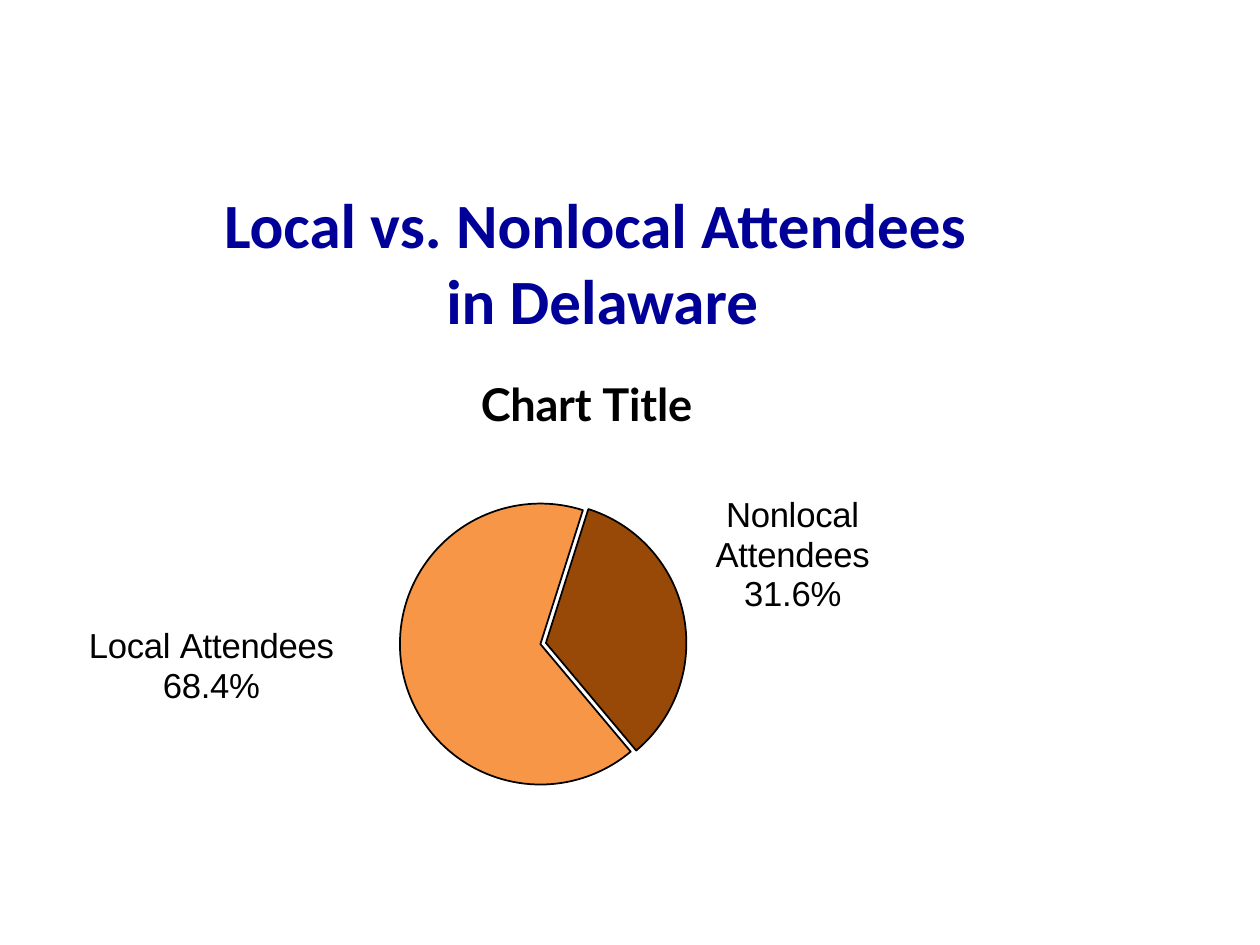
from lxml import etree
from pptx import Presentation
from pptx.chart.data import CategoryChartData
from pptx.dml.color import RGBColor
from pptx.enum.chart import XL_CHART_TYPE, XL_LABEL_POSITION
from pptx.enum.text import MSO_ANCHOR, PP_ALIGN
from pptx.oxml.ns import qn
from pptx.util import Inches, Pt

PIE = XL_CHART_TYPE.PIE
OUT = XL_LABEL_POSITION.OUTSIDE_END
MIDDLE = MSO_ANCHOR.MIDDLE
CENTER = PP_ALIGN.CENTER

COLORS = {"navy": "000099", "black": "000000", "orange": "F79646", "brown": "984807"}
SLICES = [
    (66, "orange", ["Local Attendees", "68.4%"], (-0.05, -0.07)),
    (34, "brown", ["Nonlocal", "Attendees", "31.6%"], (0.02, 0)),
]


def color(name):
    return RGBColor.from_string(COLORS[name])


def style(font, face, size, tint, bold):
    font.name, font.size, font.bold = face, Pt(size), bold
    font.color.rgb = color(tint)


def set_val(node, tag, val):
    child = node.find(qn(tag))
    if child is None:
        child = etree.SubElement(node, qn(tag))
    child.set("val", str(val))


def set_layout(node, spot, **vals):
    for old in node.findall(qn("c:layout")):
        node.remove(old)
    layout = etree.Element(qn("c:layout"))
    manual = etree.SubElement(layout, qn("c:manualLayout"))
    for tag, val in vals.items():
        set_val(manual, "c:" + tag, val)
    node.insert(spot, layout)


def add_title(slide, left, top, width, height):
    frame = slide.shapes.add_textbox(left, top, width, height).text_frame
    frame.word_wrap = True
    frame.vertical_anchor = MIDDLE
    para = frame.paragraphs[0]
    para.alignment = CENTER
    for num, text in enumerate(["Local vs. Nonlocal Attendees ", "in Delaware"]):
        if num:
            para.add_line_break()
        run = para.add_run()
        run.text = text
        style(run.font, "Calibri", 36, "navy", True)


def add_label(point, lines, shift):
    label = point.data_label
    frame = label.text_frame
    for num, text in enumerate(lines):
        para = frame.add_paragraph() if num else frame.paragraphs[0]
        run = para.add_run()
        run.text = text
        style(run.font, "Arial", 19.8, "black", False)
    label.position = OUT
    node = frame._txBody.getparent().getparent()
    set_layout(node, 1, x=shift[0], y=shift[1])


def add_pie(slide, left, top, width, height):
    data = CategoryChartData()
    data.categories = ["1", "2"]
    data.add_series("Series 1", [part[0] for part in SLICES])
    chart = slide.shapes.add_chart(PIE, left, top, width, height, data).chart
    style(chart.font, "Lato", 21.5, "black", True)
    chart.has_legend = False
    chart.has_title = True
    run = chart.chart_title.text_frame.paragraphs[0].add_run()
    run.text = "Chart Title"
    style(run.font, "Lato", 25.8, "black", True)

    plot = chart.plots[0]
    plot.vary_by_categories = True
    series = plot.series[0]
    burst = etree.Element(qn("c:explosion"))
    burst.set("val", "2")
    series._element.find(qn("c:cat")).addprevious(burst)
    for num, (_, tint, lines, shift) in enumerate(SLICES):
        point = series.points[num]
        point.format.fill.solid()
        point.format.fill.fore_color.rgb = color(tint)
        point.format.line.color.rgb = color("black")
        point.format.line.width = Pt(1)
        add_label(point, lines, shift)
    set_val(series._element.find(qn("c:dLbls")), "c:showLeaderLines", 0)

    pie = plot._element
    set_val(pie, "c:firstSliceAng", 140)
    set_layout(pie.getparent(), 0, layoutTarget="inner", xMode="edge", yMode="edge",
               x=0.34, y=0.24, w=0.25, h=0.44)


def main():
    deck = Presentation()
    deck.slide_width, deck.slide_height = Inches(10), Inches(7.5)
    slide = deck.slides.add_slide(deck.slide_layouts[6])
    add_title(slide, Inches(0), Inches(1.45), Inches(9.56), Inches(1.25))
    add_pie(slide, Inches(-0.25), Inches(2.73), Inches(9.81), Inches(5.17))
    deck.save("out.pptx")


if __name__ == "__main__":
    main()
